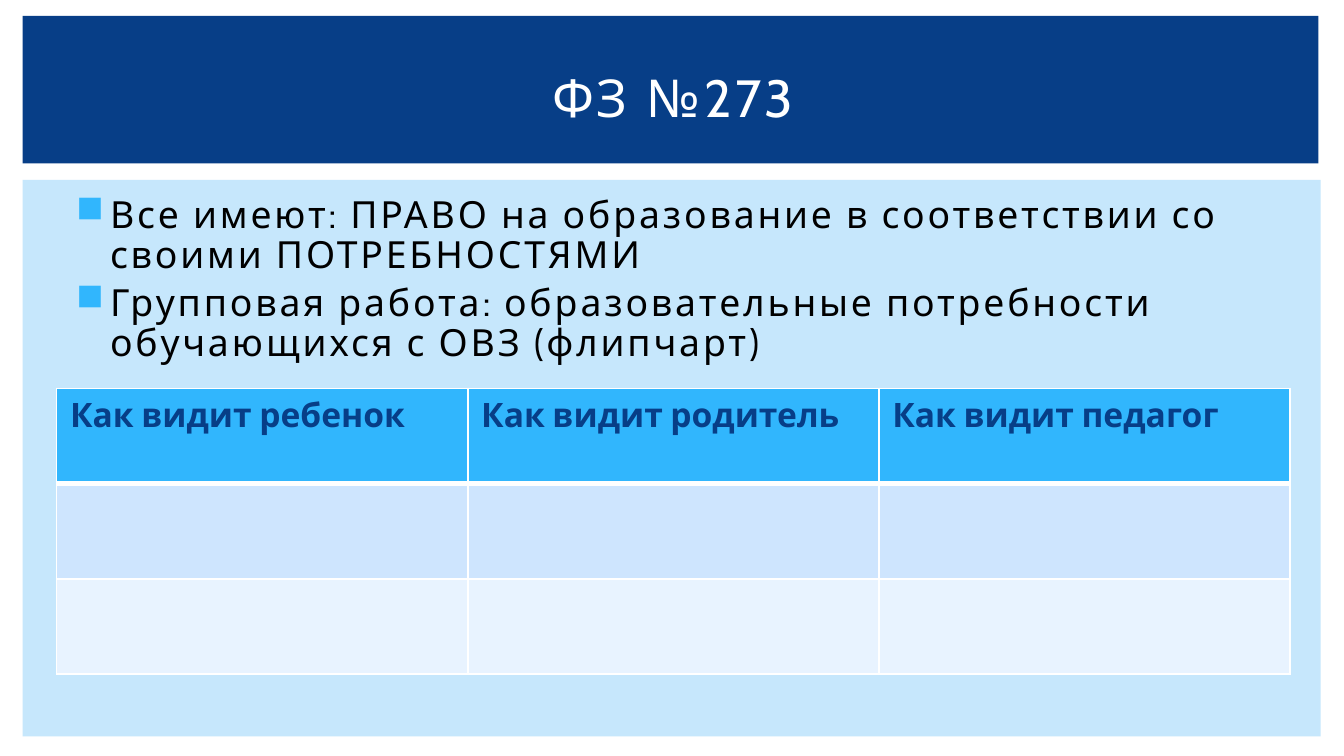
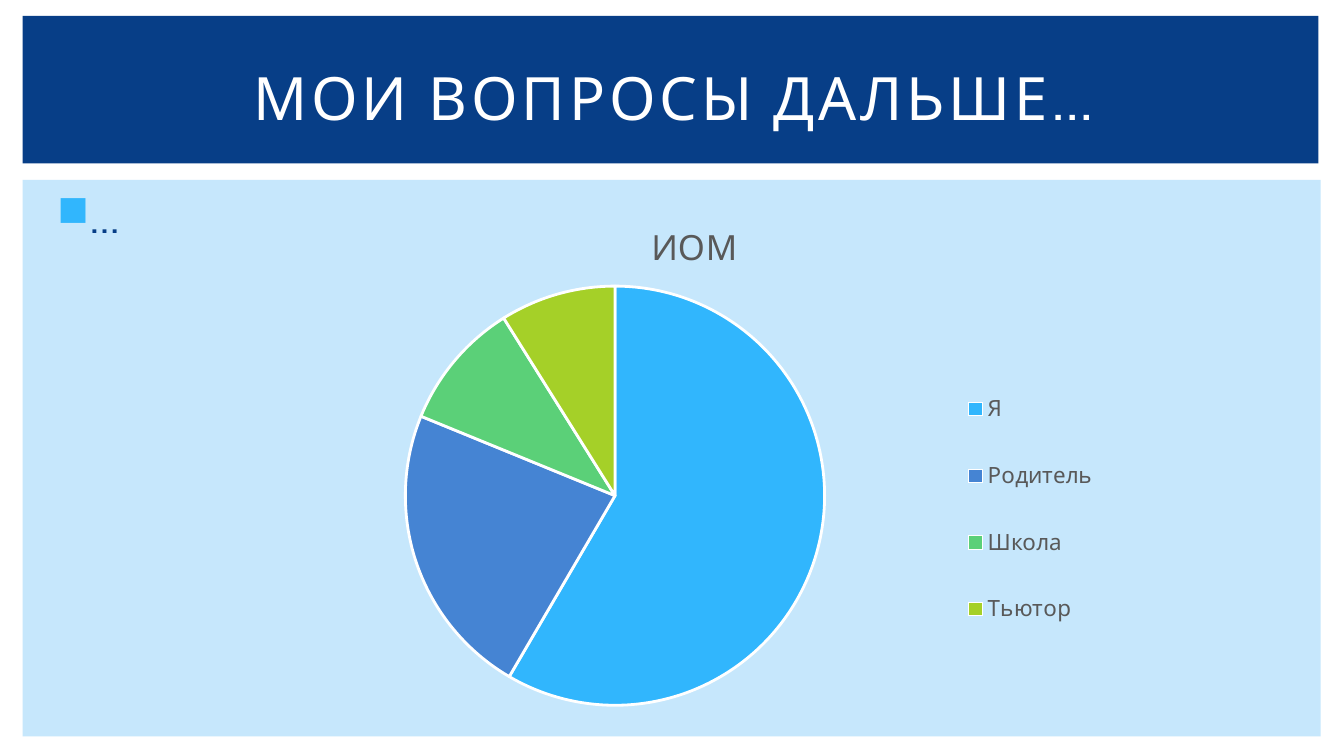
from lxml.etree import SubElement
from pptx import Presentation
from pptx.chart.data import CategoryChartData
from pptx.dml.color import RGBColor
from pptx.enum.chart import XL_CHART_TYPE, XL_LEGEND_POSITION
from pptx.enum.shapes import MSO_SHAPE
from pptx.enum.text import MSO_ANCHOR, PP_ALIGN
from pptx.oxml import parse_xml
from pptx.oxml.ns import nsdecls, qn
from pptx.util import Cm, Pt

COLORS = {
    "white": "FFFFFF", "black": "000000", "grey": "595959",
    "navy": "073E87", "panel": "C6E7FC", "sky": "31B6FD",
    "blue": "4584D3", "green": "5BD078", "lime": "A5D028",
    "row_odd": "CEE5FE", "row_even": "E8F3FF",
}
FONT = "Cabin"


def rgb(name):
    return RGBColor.from_string(COLORS[name])


def style_font(font, size, color, bold=False):
    font.name, font.size, font.bold = FONT, Pt(size), bold
    font.color.rgb = rgb(color)


def write(p, text, size=18, color="black", bold=False, spacing=0, align=None):
    """Add one formatted run to a paragraph."""
    r = p.add_run()
    r.text = text
    style_font(r.font, size, color, bold)
    if spacing:
        r.font._element.set("spc", str(int(spacing * 100)))
    if align is not None:
        p.alignment = align


def add_bullet(p, size):
    p.line_spacing = 0.9
    p.space_before = Pt(size * 0.2)
    pPr = p._p.get_or_add_pPr()
    pPr.set("marL", str(Cm(0.76)))
    pPr.set("indent", str(Cm(-0.64)))
    color = SubElement(pPr, qn("a:buClr"))
    SubElement(color, qn("a:srgbClr"), val=COLORS["sky"])
    SubElement(pPr, qn("a:buChar"), char="■")


def set_borders(cell, top=1, bottom=1):
    tcPr = cell._tc.get_or_add_tcPr()
    widths = {"lnL": 1, "lnR": 1, "lnT": top, "lnB": bottom}
    for i, (side, width) in enumerate(widths.items()):
        tcPr.insert(i, parse_xml(
            f'<a:{side} {nsdecls("a")} w="{Pt(width)}"><a:solidFill>'
            f'<a:srgbClr val="{COLORS["white"]}"/></a:solidFill></a:{side}>'))


def place(part, index, **fractions):
    """Give a chart part a fixed place, in fractions of the chart."""
    for old in part.findall(qn("c:layout")):
        part.remove(old)
    layout = parse_xml(f'<c:layout {nsdecls("c")}><c:manualLayout/></c:layout>')
    if part.tag == qn("c:plotArea"):
        SubElement(layout[0], qn("c:layoutTarget"), val="inner")
    for mode in ("xMode", "yMode"):
        SubElement(layout[0], qn(f"c:{mode}"), val="edge")
    for key, value in fractions.items():
        SubElement(layout[0], qn(f"c:{key}"), val=str(value))
    part.insert(index, layout)


class Deck:
    def __init__(self):
        self.prs = Presentation()
        self.prs.slide_width, self.prs.slide_height = Cm(25.4), Cm(14.29)
        self.s = None

    def new_slide(self, title, size):
        self.s = self.prs.slides.add_slide(self.prs.slide_layouts[6])
        self.band(0.43, 3.4, 24.53, 10.52, "panel")
        self.band(0.43, 0.3, 24.49, 2.79, "navy")
        tf = self.text_frame(1.07, 0.74, 23.3, 2.18)
        tf.vertical_anchor = MSO_ANCHOR.MIDDLE
        write(tf.paragraphs[0], title, size=size, color="white", spacing=2,
              align=PP_ALIGN.CENTER)

    def band(self, x, y, w, h, color):
        sp = self.s.shapes.add_shape(MSO_SHAPE.RECTANGLE, Cm(x), Cm(y), Cm(w), Cm(h))
        sp.shadow.inherit = False
        sp.fill.solid()
        sp.fill.fore_color.rgb = rgb(color)
        sp.line.fill.background()

    def text_frame(self, x, y, w, h):
        tf = self.s.shapes.add_textbox(Cm(x), Cm(y), Cm(w), Cm(h)).text_frame
        tf.word_wrap = True
        return tf

    def bullets(self, x, y, w, h, items, size, color):
        tf = self.text_frame(x, y, w, h)
        for i, item in enumerate(items):
            p = tf.add_paragraph() if i else tf.paragraphs[0]
            add_bullet(p, size)
            write(p, item, size=size, color=color, spacing=1.5)

    def table(self, x, y, col_w, row_h, headers, row_fills):
        rows, cols = len(row_fills), len(headers)
        table = self.s.shapes.add_table(rows, cols, Cm(x), Cm(y), Cm(col_w * cols),
                                        Cm(row_h * rows)).table
        for col in table.columns:
            col.width = Cm(col_w)
        for i, fill in enumerate(row_fills):
            table.rows[i].height = Cm(row_h)
            for j, header in enumerate(headers):
                cell = table.cell(i, j)
                cell.fill.solid()
                cell.fill.fore_color.rgb = rgb(fill)
                # The line under the header row is thicker
                set_borders(cell, top=3 if i == 1 else 1, bottom=3 if i == 0 else 1)
                if i == 0:
                    write(cell.text_frame.paragraphs[0], header, color="navy", bold=True)

    def pie(self, x, y, w, h, title, values, colors):
        data = CategoryChartData()
        data.categories = list(values)
        data.add_series("Series 1", list(values.values()))
        chart = self.s.shapes.add_chart(XL_CHART_TYPE.PIE, Cm(x), Cm(y), Cm(w), Cm(h),
                                        data).chart
        style_font(chart.font, 10, "black")
        # Title and legend
        chart.has_title = True
        write(chart.chart_title.text_frame.paragraphs[0], title, size=18.6, color="grey")
        chart.has_legend = True
        chart.legend.position = XL_LEGEND_POSITION.RIGHT
        chart.legend.include_in_layout = False
        style_font(chart.legend.font, 12, "grey")
        # Slices
        plot = chart.plots[0]
        plot.vary_by_categories = True
        for i, color in enumerate(colors):
            fmt = plot.series[0].points[i].format
            fmt.fill.solid()
            fmt.fill.fore_color.rgb = rgb(color)
            fmt.line.color.rgb = rgb("white")
            fmt.line.width = Pt(1.5)
        # Places of the parts
        root = chart.element.find(qn("c:chart"))
        place(root.find(qn("c:title")), 1, x=0.45, y=0.05)
        place(root.find(qn("c:plotArea")), 0, x=0.17, y=0.18, w=0.49, h=0.78)
        place(root.find(qn("c:legend")), 1, x=0.81, y=0.31, w=0.18, h=0.57)


def main():
    deck = Deck()

    # Slide 1: the law and the group work table
    deck.new_slide("ФЗ №273", 28)
    deck.bullets(1.07, 3.58, 23.34, 9.19, [
        "Все имеют: ПРАВО на образование в соответствии со своими ПОТРЕБНОСТЯМИ",
        "Групповая работа: образовательные потребности обучающихся с ОВЗ (флипчарт)",
    ], 20, "black")
    deck.table(1.07, 7.34, 7.77, 1.8,
               ["Как видит ребенок", "Как видит родитель", "Как видит педагог"],
               ["sky", "row_odd", "row_even"])

    # Slide 2: further questions and the pie
    deck.new_slide("МОИ ВОПРОСЫ ДАЛЬШЕ…", 32)
    deck.bullets(0.71, 3.58, 23.72, 10.16, ["…"], 23, "navy")
    deck.pie(4.9, 3.58, 16.2, 10.16, "ИОМ",
             {"Я": 59, "Родитель": 23, "Школа": 10, "Тьютор": 9},
             ["sky", "blue", "green", "lime"])

    deck.prs.save("out.pptx")


if __name__ == "__main__":
    main()
